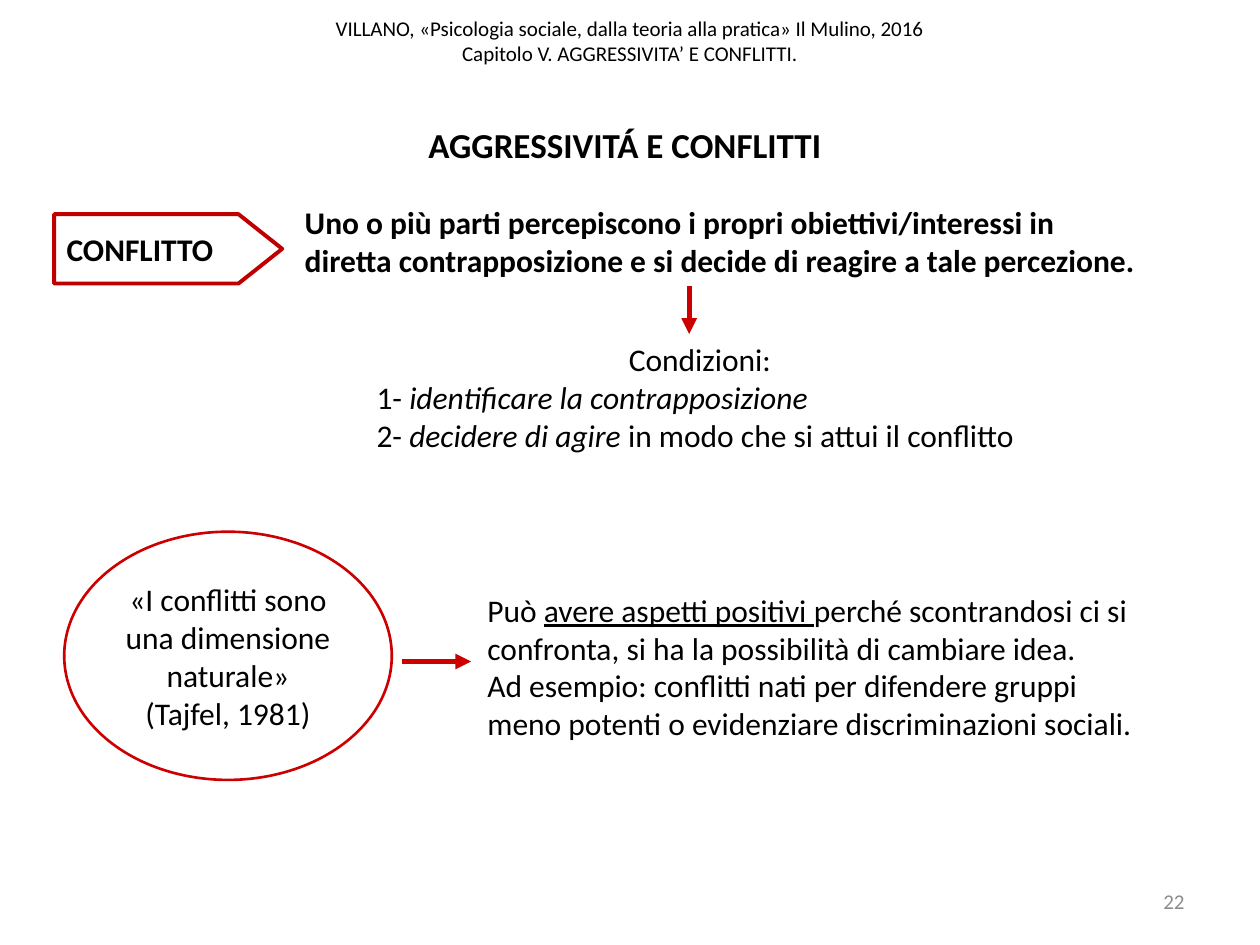
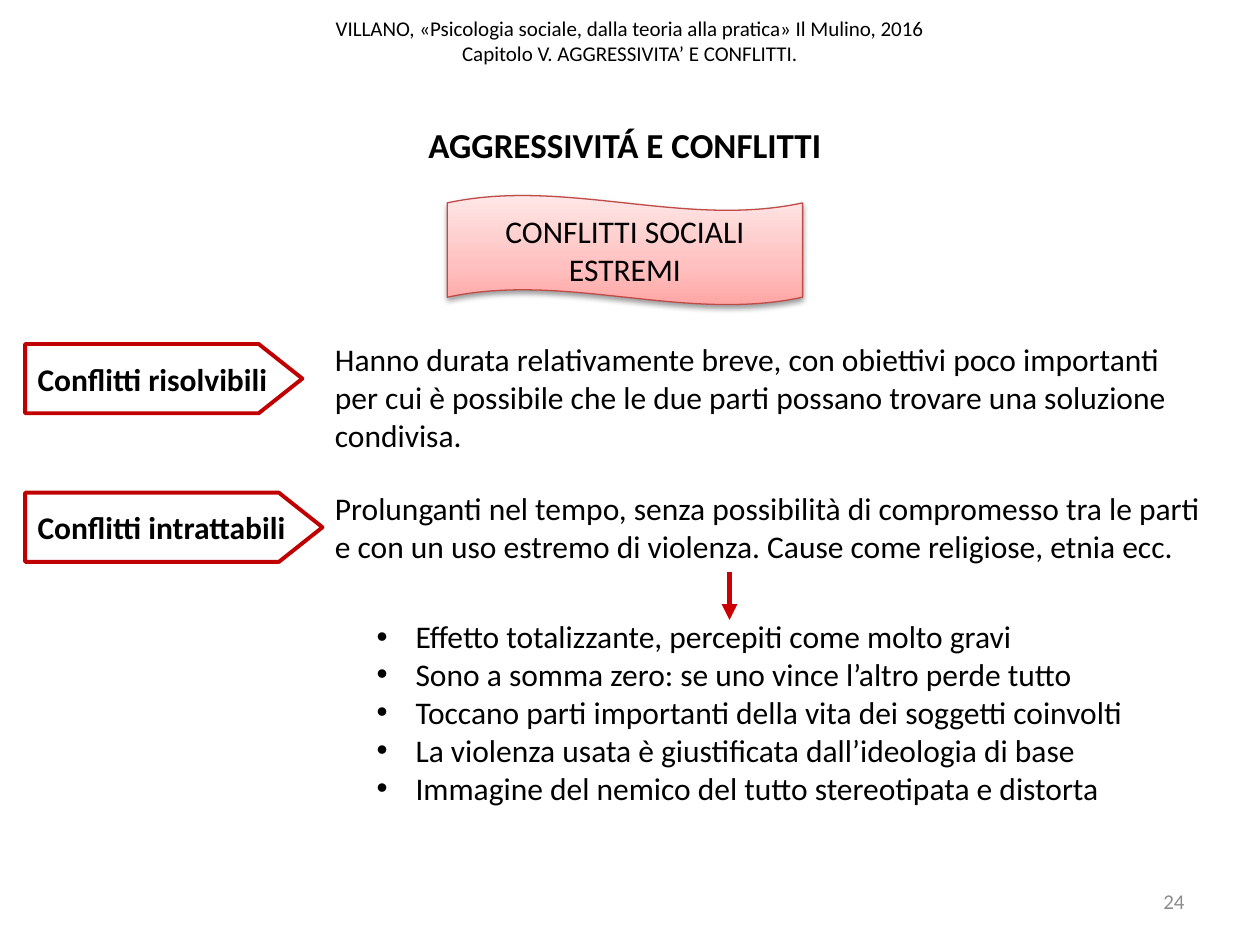
from copy import deepcopy
from typing import NamedTuple, Sequence, Union

from lxml import etree
from pptx import Presentation
from pptx import util as u
from pptx.dml.color import RGBColor
from pptx.enum import shapes, text
from pptx.oxml.ns import qn

PX = 9144  # EMU in one px, 100 px to the inch
FONT = "Calibri"
BLACK = RGBColor(0x00, 0x00, 0x00)
GREY = RGBColor(0x8C, 0x8C, 0x8C)
PLATE_RED = RGBColor(0xC0, 0x00, 0x00)
ARROW_RED = RGBColor(0xCC, 0x00, 0x00)
BANNER_LINE = RGBColor(0xBF, 0x4C, 0x48)
BANNER_STOPS = (
    (0.0, RGBColor(0xFF, 0xA6, 0xA5)),
    (0.35, RGBColor(0xFF, 0xC0, 0xBF)),
    (1.0, RGBColor(0xFF, 0xE7, 0xE7)),
)
BULLET_INDENT = 31

LEFT, CENTER, RIGHT = text.PP_ALIGN.LEFT, text.PP_ALIGN.CENTER, text.PP_ALIGN.RIGHT
TOP, MIDDLE = text.MSO_ANCHOR.TOP, text.MSO_ANCHOR.MIDDLE

HEADER = (
    "VILLANO, «Psicologia sociale, dalla teoria alla pratica» Il Mulino, 2016\n"
    "Capitolo V. AGGRESSIVITA’ E CONFLITTI."
)
TITLE = "AGGRESSIVITÁ E CONFLITTI"


class Box(NamedTuple):
    left: int
    top: int
    width: int
    height: int


class Run(NamedTuple):
    text: str
    italic: bool = False
    underline: bool = False


class Line(NamedTuple):
    content: Union[str, Sequence[Run]]
    align: text.PP_ALIGN = LEFT
    bullet: bool = False


class Style(NamedTuple):
    size: int = 18
    bold: bool = False
    color: RGBColor = BLACK
    anchor: text.MSO_ANCHOR = TOP


class TextBlock(NamedTuple):
    box: Box
    lines: Sequence[Line]
    style: Style = Style()


class Plate(NamedTuple):
    box: Box
    label: str


class Arrow(NamedTuple):
    start_x: int
    start_y: int
    end_x: int
    end_y: int


def emu(lengths: Sequence[int]) -> list[int]:
    return [length * PX for length in lengths]


def add_bullet(paragraph) -> None:
    properties = paragraph._p.get_or_add_pPr()
    properties.set("marL", str(BULLET_INDENT * PX))
    properties.set("indent", str(-BULLET_INDENT * PX))
    etree.SubElement(properties, qn("a:buFont"), typeface="Arial")
    etree.SubElement(properties, qn("a:buChar"), char="•")


def write(shape, lines: Sequence[Line], style: Style) -> None:
    frame = shape.text_frame
    frame.word_wrap = True
    frame.vertical_anchor = style.anchor
    for index, line in enumerate(lines):
        paragraph = frame.add_paragraph() if index else frame.paragraphs[0]
        paragraph.alignment = line.align
        if line.bullet:
            add_bullet(paragraph)
        font = paragraph.font
        font.name, font.size, font.bold = FONT, u.Pt(style.size), style.bold
        font.color.rgb = style.color
        if isinstance(line.content, str):
            paragraph.text = line.content
            continue
        for part in line.content:
            run = paragraph.add_run()
            run.text = part.text
            run.font.italic = part.italic
            run.font.underline = part.underline


def add_text(slide, block: TextBlock) -> None:
    write(slide.shapes.add_textbox(*emu(block.box)), block.lines, block.style)


def add_outline(slide, kind: shapes.MSO_SHAPE, box: Box, color: RGBColor, width: float):
    """Add an unfilled preset shape without shadow."""
    shape = slide.shapes.add_shape(kind, *emu(box))
    shape.shadow.inherit = False
    shape.fill.background()
    shape.line.color.rgb = color
    shape.line.width = u.Pt(width)
    return shape


def add_plate(slide, plate: Plate) -> None:
    shape = add_outline(slide, shapes.MSO_SHAPE.PENTAGON, plate.box, PLATE_RED, 2.25)
    shape.adjustments[0] = 0.63
    shape.text_frame.margin_right = 0
    write(shape, [Line(plate.label)], Style(bold=True, anchor=MIDDLE))


def add_quote(slide, box: Box, lines: Sequence[str]) -> None:
    shape = add_outline(slide, shapes.MSO_SHAPE.OVAL, box, ARROW_RED, 1.5)
    write(shape, [Line(line, CENTER) for line in lines], Style(anchor=MIDDLE))


def add_banner(slide, box: Box, label: str) -> None:
    """Add a wave with a three-stop gradient and a soft shadow below."""
    shape = add_outline(slide, shapes.MSO_SHAPE.WAVE, box, BANNER_LINE, 0.75)
    shape.adjustments[0] = 0.07
    shape.adjustments[1] = 0
    shape.fill.gradient()
    shape.fill.gradient_angle = 90
    properties = shape._element.spPr
    stop_list = properties.find(f".//{qn('a:gsLst')}")
    stop_list.insert(1, deepcopy(stop_list[0]))
    for stop, (position, color) in zip(shape.fill.gradient_stops, BANNER_STOPS):
        stop.position = position
        stop.color.rgb = color
    shadow = etree.SubElement(
        properties.find(qn("a:effectLst")), qn("a:outerShdw"),
        blurRad="40000", dist="20000", dir="5400000", rotWithShape="0",
    )
    shadow_color = etree.SubElement(shadow, qn("a:srgbClr"), val=str(BLACK))
    etree.SubElement(shadow_color, qn("a:alpha"), val="38000")
    write(shape, [Line(label, CENTER)], Style(anchor=MIDDLE))


def add_arrow(slide, arrow: Arrow) -> None:
    connector = slide.shapes.add_connector(shapes.MSO_CONNECTOR.STRAIGHT, *emu(arrow))
    connector.line.color.rgb = ARROW_RED
    connector.line.width = u.Pt(3)
    properties = connector._element.spPr
    etree.SubElement(properties.find(qn("a:ln")), qn("a:tailEnd"), type="triangle")
    etree.SubElement(properties, qn("a:effectLst"))


def add_base_slide(presentation, number: int):
    """Add a blank slide with the shared header, page number and title."""
    slide = presentation.slides.add_slide(presentation.slide_layouts[6])
    for block in (
        TextBlock(Box(0, -11, 1000, 87), [Line(HEADER, CENTER)],
                  Style(12, anchor=MIDDLE)),
        TextBlock(Box(717, 695, 233, 40), [Line(str(number), RIGHT)],
                  Style(12, color=GREY, anchor=MIDDLE)),
        TextBlock(Box(169, 93, 654, 44), [Line(TITLE, CENTER)], Style(20, bold=True)),
    ):
        add_text(slide, block)
    return slide


def build_conflict(presentation) -> None:
    slide = add_base_slide(presentation, 22)
    add_plate(slide, Plate(Box(43, 170, 181, 55), "CONFLITTO"))
    definition = (
        "Uno o più parti percepiscono i propri obiettivi/interessi in diretta "
        "contrapposizione e si decide di reagire a tale percezione."
    )
    add_text(slide, TextBlock(Box(232, 156, 685, 71), [Line(definition)], Style(bold=True)))
    add_arrow(slide, Arrow(547, 227, 547, 265))
    add_text(slide, TextBlock(Box(289, 265, 533, 101), [
        Line("Condizioni:", CENTER),
        Line([Run("1- "), Run("identificare la contrapposizione", italic=True)]),
        Line([Run("2- "), Run("decidere di agire ", italic=True),
              Run("in modo che si attui il conflitto")]),
    ]))
    add_quote(slide, Box(51, 422, 260, 197),
              ["«I conflitti sono una dimensione naturale»", "(Tajfel, 1981)"])
    add_arrow(slide, Arrow(319, 525, 374, 525))
    add_text(slide, TextBlock(Box(377, 464, 533, 131), [
        Line([Run("Può "), Run("avere aspetti positivi ", underline=True),
              Run("perché scontrandosi ci si confronta, si ha la possibilità "
                  "di cambiare idea.")]),
        Line("Ad esempio: conflitti nati per difendere gruppi meno potenti "
             "o evidenziare discriminazioni sociali."),
    ]))


def build_extreme_conflicts(presentation) -> None:
    slide = add_base_slide(presentation, 24)
    add_banner(slide, Box(355, 155, 282, 87), "CONFLITTI SOCIALI ESTREMI")
    kinds = (
        (273, 220, "Conflitti risolvibili", 101,
         "Hanno durata relativamente breve, con obiettivi poco importanti per cui è "
         "possibile che le due parti possano trovare una soluzione condivisa."),
        (391, 236, "Conflitti intrattabili", 71,
         "Prolunganti nel tempo, senza possibilità di compromesso tra le parti e con "
         "un uso estremo di violenza. Cause come religiose, etnia ecc."),
    )
    for top, plate_width, label, text_height, description in kinds:
        add_plate(slide, Plate(Box(20, top, plate_width, 55), label))
        add_text(slide, TextBlock(Box(256, top - 8, 709, text_height), [Line(description)]))
    add_arrow(slide, Arrow(579, 454, 579, 492))
    effects = (
        "Effetto totalizzante, percepiti come molto gravi",
        "Sono a somma zero: se uno vince l’altro perde tutto",
        "Toccano parti importanti della vita dei soggetti coinvolti",
        "La violenza usata è giustificata dall’ideologia di base",
        "Immagine del nemico del tutto stereotipata e distorta",
    )
    add_text(slide, TextBlock(Box(289, 485, 620, 162),
                              [Line(effect, bullet=True) for effect in effects]))


def main() -> None:
    presentation = Presentation()
    presentation.slide_width, presentation.slide_height = emu((1000, 750))
    build_conflict(presentation)
    build_extreme_conflicts(presentation)
    presentation.save("out.pptx")


if __name__ == "__main__":
    main()
